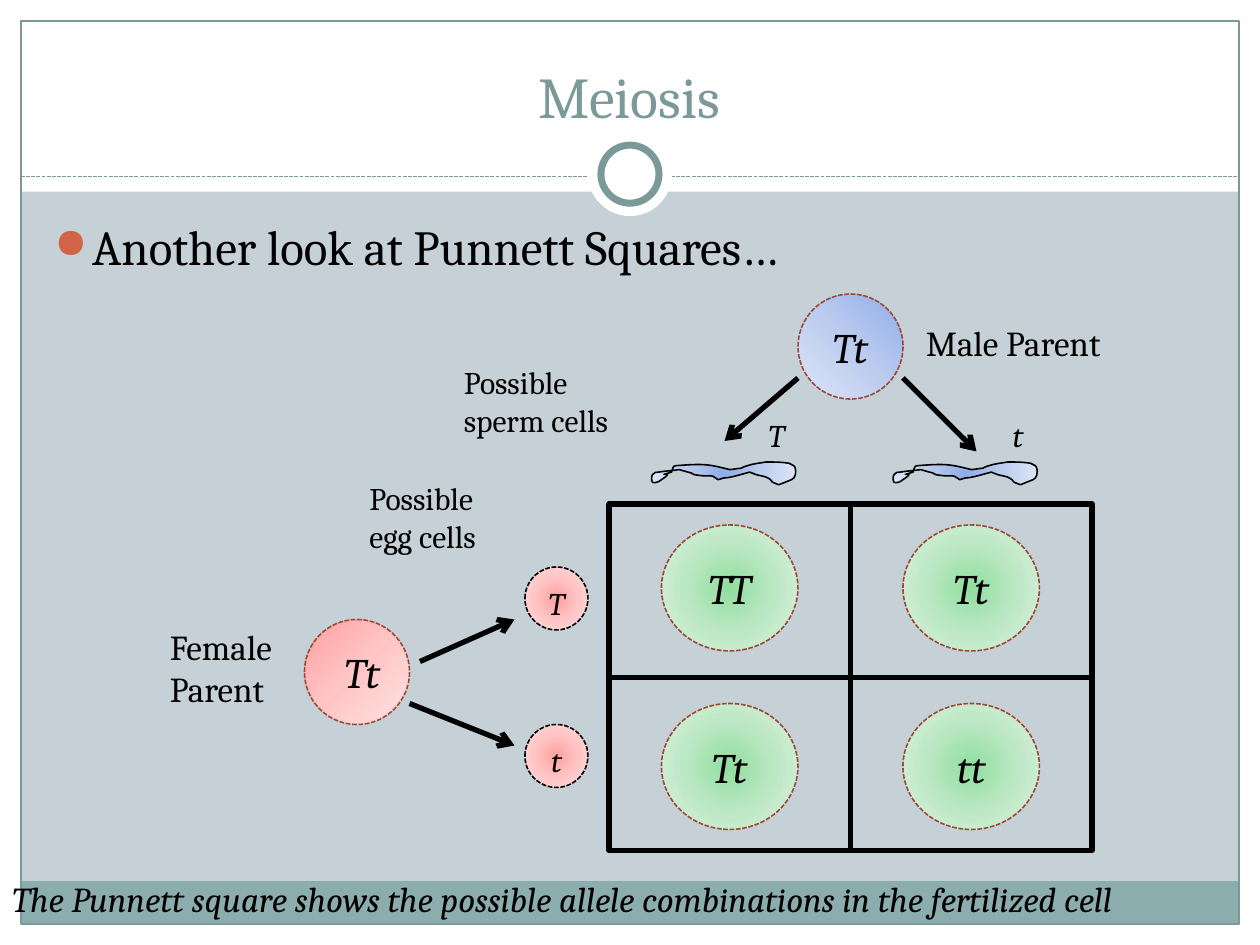
from collections import namedtuple
from dataclasses import dataclass

from pptx import Presentation
from pptx import oxml
from pptx import util as u
from pptx.dml.color import RGBColor
from pptx.enum import dml, shapes, text
from pptx.oxml.ns import nsdecls, qn

Box = namedtuple("Box", "x y w h")


@dataclass(frozen=True)
class Theme:
    """Hold the colours, gradients and type sizes of the slide."""
    font: str = "Cambria"
    ground: str = "C5D1D7"
    white: str = "FFFFFF"
    black: str = "000000"
    slate: str = "7C999A"
    footer: str = "8CADAE"
    bullet: str = "D16349"
    membrane: str = "9B4936"
    male: tuple = ("8FADE9", "BCCCEF", "DEE6F7")
    female: tuple = ("FFA0A0", "FFC5C5", "FFE3E3")
    offspring: tuple = ("91DEA0", "BDE8C5", "DFF3E3")
    title: int = 33
    body: int = 28
    genotype: int = 24
    label: int = 20
    small: int = 18


THEME = Theme()
SPERM_SIZE = (115, 18)
SPERM_START = (1, 16)
SPERM_OUTLINE = [
    [(2, 17), (6, 16), (8, 14)], [(22, 5), (0, 13), (16, 8)], [(17, 6), (17, 3), (19, 3)],
    [(43, 1), (46, 2), (62, 6)], [(65, 6), (68, 5), (71, 5)], [(73, 4), (75, 3), (76, 3)],
    [(82, 1), (86, 1), (91, 0)], [(97, 0), (103, 0), (109, 1)], [(111, 2), (114, 3), (114, 5)],
    [(115, 8), (114, 13), (111, 14)], [(101, 18)], [(99, 17), (98, 17), (96, 16)],
    [(95, 15), (94, 13), (93, 13)], [(90, 11), (86, 11), (83, 10)], [(78, 8)],
    [(73, 10), (73, 10), (67, 11)], [(55, 14), (62, 11), (53, 14)], [(44, 8), (52, 13), (34, 10)],
    [(32, 9), (31, 8), (29, 8)], [(27, 7), (24, 7), (22, 6)], [(17, 7), (11, 7), (6, 8)],
    [(4, 8), (2, 8), (1, 10)], [(0, 11), (0, 15), (1, 16)],
]


def points(*lengths):
    """Convert numbers to point lengths."""
    return [u.Pt(length) for length in lengths]


def set_line(line, color, width, dashed=False):
    """Format an outline or a connector line."""
    line.color.rgb = RGBColor.from_string(color)
    line.width = u.Pt(width)
    if dashed:
        line.dash_style = dml.MSO_LINE.SQUARE_DOT


def set_gradient(shape, colors, angle=None):
    """Fill a shape with a linear gradient, or a radial one without an angle."""
    stops = "".join(f'<a:gs pos="{50000 * i}"><a:srgbClr val="{color}"/></a:gs>'
                    for i, color in enumerate(colors))
    course = (f'<a:lin ang="{angle * 60000}" scaled="0"/>' if angle is not None else
              '<a:path path="circle"><a:fillToRect l="50000" t="50000" r="50000" b="50000"/></a:path>')
    shape.fill.background()
    properties = shape._element.spPr
    properties.replace(properties.find(qn("a:noFill")), oxml.parse_xml(
        f'<a:gradFill {nsdecls("a")}><a:gsLst>{stops}</a:gsLst>{course}</a:gradFill>'))


def add_shape(slide, box, kind="RECTANGLE", fill=None, line=None, width=0.75, dashed=False):
    """Add a preset shape with a plain fill and outline."""
    shape = slide.shapes.add_shape(shapes.MSO_SHAPE[kind], *points(*box))
    shape.shadow.inherit = False
    if fill:
        shape.fill.solid()
        shape.fill.fore_color.rgb = RGBColor.from_string(fill)
    else:
        shape.fill.background()
    if line:
        set_line(shape.line, line, width, dashed)
    else:
        shape.line.fill.background()
    return shape


def add_line(slide, start, end, color=THEME.black, width=3, dashed=False, arrow=False):
    """Add a straight connector, with an arrowhead at its end if asked."""
    line = slide.shapes.add_connector(shapes.MSO_CONNECTOR.STRAIGHT, *points(*start, *end))
    set_line(line.line, color, width, dashed)
    properties = line._element.spPr
    if arrow:
        properties.find(qn("a:ln")).append(oxml.parse_xml(f'<a:tailEnd {nsdecls("a")} type="arrow"/>'))
    properties.append(oxml.parse_xml(f'<a:effectLst {nsdecls("a")}/>'))


def add_text(slide, box, words, size=THEME.label, color=THEME.black, italic=False,
             align="LEFT", anchor="TOP"):
    """Add a wrapped text box and return its paragraph."""
    frame = slide.shapes.add_textbox(*points(*box)).text_frame
    frame.word_wrap = True
    frame.vertical_anchor = text.MSO_ANCHOR[anchor]
    paragraph = frame.paragraphs[0]
    paragraph.alignment = text.PP_ALIGN[align]
    run = paragraph.add_run()
    run.text = words
    run.font.name, run.font.size, run.font.italic = THEME.font, u.Pt(size), italic
    run.font.color.rgb = RGBColor.from_string(color)
    return paragraph


def add_cell(slide, box, colors, alleles, label, size=THEME.genotype, angle=None, membrane=THEME.membrane):
    """Add a round cell with its alleles, the label box being relative to the cell."""
    cell = add_shape(slide, box, "OVAL", line=membrane, width=0.9, dashed=True)
    set_gradient(cell, colors, angle)
    label_box = Box(box.x + label.x, box.y + label.y, label.w, label.h)
    add_text(slide, label_box, alleles, size=size, italic=True, align="CENTER")


def add_sperm(slide, box, allele):
    """Add a curved sperm outline that fills the box, with its allele above."""
    scale = u.Pt(box.w) / SPERM_SIZE[0], u.Pt(box.h) / SPERM_SIZE[1]
    builder = slide.shapes.build_freeform(*SPERM_START, scale=scale)
    builder.add_line_segments([vertex for segment in SPERM_OUTLINE for vertex in segment], close=True)
    sperm = builder.convert_to_shape(*points(box.x, box.y))
    vertices = iter(list(sperm._element.spPr.iter(qn("a:lnTo"))))
    for segment in SPERM_OUTLINE:
        steps = [next(vertices) for _ in segment]
        if len(steps) == 3:
            curve = oxml.parse_xml(f'<a:cubicBezTo {nsdecls("a")}/>')
            steps[0].addprevious(curve)
            for step in steps:
                curve.append(step[0])
                step.getparent().remove(step)
    sperm.shadow.inherit = False
    set_gradient(sperm, THEME.male)
    set_line(sperm.line, THEME.black, 0.9)
    add_text(slide, Box(box.x + 59.5, box.y - 30, 24, 29), allele, size=THEME.small, italic=True, align="CENTER")


def add_frame(slide, box):
    """Add the white margins, footer band, border and ring divider."""
    edge, divider, middle = 12, 100.8, box.x + box.w / 2
    right, bottom = box.x + box.w - edge, box.y + box.h - edge
    for margin in (Box(box.x, bottom, box.w, edge), Box(box.x, box.y, box.w, 109.5),
                   Box(box.x, box.y, edge, box.h), Box(right, box.y, edge, box.h)):
        add_shape(slide, margin, fill=THEME.white)
    inner = box.w - 2 * edge
    add_shape(slide, Box(box.x + edge, bottom - 24.5, inner, 24.5), fill=THEME.footer)
    add_shape(slide, Box(box.x + edge, box.y + edge, inner, box.h - 2 * edge), line=THEME.slate)
    add_line(slide, (box.x + edge, divider), (right, divider), THEME.slate, 0.75, dashed=True)
    for size, outline in ((48, None), (33.2, THEME.slate)):
        add_shape(slide, Box(middle - size / 2, 99.5 - size / 2, size, size), "OVAL",
                  THEME.white, outline, 4)


def add_heading(slide, box):
    """Add the title and the bulleted opening line."""
    add_text(slide, Box(box.x, box.y, box.w, 60), "Meiosis", size=THEME.title,
             color=THEME.slate, align="CENTER", anchor="BOTTOM")
    opening = add_text(slide, Box(box.x, box.y + 102, box.w, 378), "Another look at Punnett Squares…",
                       size=THEME.body, align="JUSTIFY")
    opening.space_before = u.Pt(5.6)
    properties = opening._p.get_or_add_pPr()
    properties.set("marL", str(u.Pt(21.6)))
    properties.set("indent", str(u.Pt(-21.6)))
    for bullet in (f'<a:buClr {nsdecls("a")}><a:srgbClr val="{THEME.bullet}"/></a:buClr>',
                   f'<a:buSzPct {nsdecls("a")} val="85000"/>',
                   f'<a:buFont {nsdecls("a")} typeface="OpenSymbol"/>',
                   f'<a:buChar {nsdecls("a")} char="●"/>'):
        properties.append(oxml.parse_xml(bullet))


def add_male(slide, box):
    """Add the male parent, its arrows and the two sperm cells."""
    x, y = box.x, box.y
    add_text(slide, Box(x + 264, y + 12, 126, 32), "Male Parent")
    add_cell(slide, Box(x + 198, y, 60, 60), THEME.male, "Tt", Box(6, 12, 48, 36), angle=135)
    add_text(slide, Box(x, y + 36, 108, 51), "Possible sperm cells", size=THEME.small)
    for column, allele in enumerate("Tt"):
        add_sperm(slide, Box(x + 114.2 + 138 * column, y + 96, 83, 13), allele)
    add_line(slide, (x + 198, y + 48), (x + 156, y + 84), arrow=True)
    add_line(slide, (x + 258, y + 48), (x + 300, y + 90), arrow=True)


def add_female(slide, box):
    """Add the female parent, its arrows and the two egg cells."""
    x, y = box.x, box.y
    add_text(slide, Box(x, y + 84, 84, 55), "Female Parent")
    add_cell(slide, Box(x + 84, y + 84, 60, 60), THEME.female, "Tt", Box(12, 12, 42, 36), angle=45)
    add_text(slide, Box(x + 114, y, 84, 51), "Possible egg cells", size=THEME.small)
    for row, allele in enumerate("Tt"):
        add_cell(slide, Box(x + 210, y + 54 + 90 * row, 36, 36), THEME.female, allele,
                 Box(6, 6, 24, 29), size=THEME.small, membrane=THEME.black)
    add_line(slide, (x + 150, y + 108), (x + 204, y + 84), arrow=True)
    add_line(slide, (x + 144, y + 132), (x + 204, y + 156), arrow=True)


def add_punnett_square(slide, box):
    """Add the two-by-two grid with an offspring cell in each square."""
    x, y, w, h = box
    add_shape(slide, box, line=THEME.black, width=3)
    add_line(slide, (x, y + h / 2), (x + w, y + h / 2))
    add_line(slide, (x + w / 2, y), (x + w / 2, y + h))
    for row, genotypes in enumerate((("TT", "Tt"), ("Tt", "tt"))):
        for column, alleles in enumerate(genotypes):
            add_cell(slide, Box(x + 30 + w / 2 * column, y + 12 + 102 * row, 78, 72),
                     THEME.offspring, alleles, Box(12, 18, 54, 36))


def main():
    """Build the slide and save it."""
    deck = Presentation()
    deck.slide_width, deck.slide_height = points(720, 540)
    slide = deck.slides.add_slide(deck.slide_layouts[6])
    slide.background.fill.solid()
    slide.background.fill.fore_color.rgb = RGBColor.from_string(THEME.ground)
    add_frame(slide, Box(0, 0, 720, 540))
    add_heading(slide, Box(24, 18, 671, 480))
    add_punnett_square(slide, Box(348, 288, 276, 198))
    add_male(slide, Box(258, 168, 390, 110))
    add_female(slide, Box(90, 270, 246, 180))
    add_text(slide, Box(0, 498, 720, 32),
             "The Punnett square shows the possible allele combinations in the fertilized cell", italic=True)
    deck.save("out.pptx")


if __name__ == "__main__":
    main()
